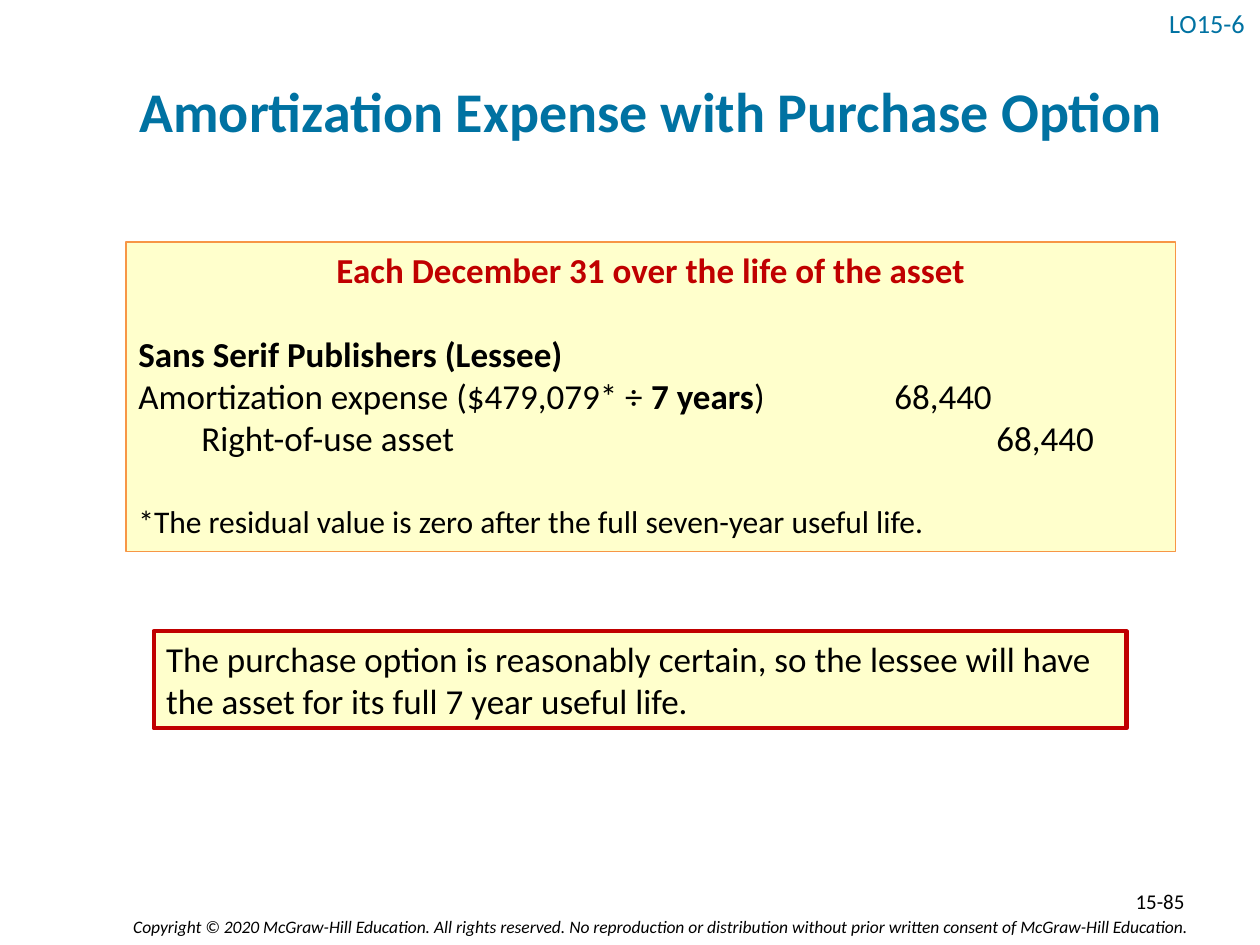
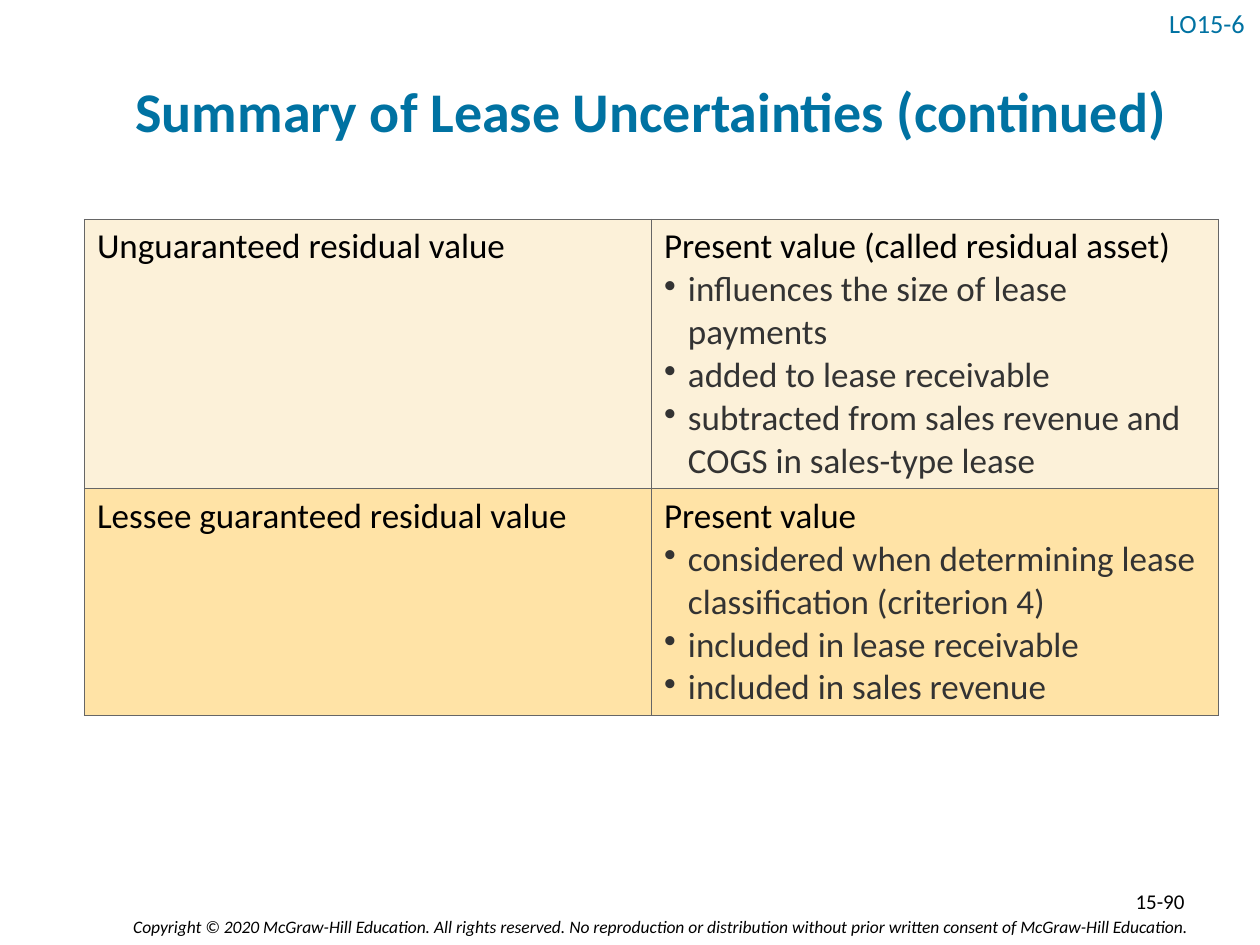
from lxml import etree
from pptx import Presentation
from pptx.dml.color import RGBColor
from pptx.enum.shapes import MSO_SHAPE
from pptx.enum.text import MSO_ANCHOR, PP_ALIGN
from pptx.oxml.ns import qn
from pptx.util import Inches, Pt

RECT = MSO_SHAPE.RECTANGLE
TOP, MIDDLE = MSO_ANCHOR.TOP, MSO_ANCHOR.MIDDLE
LEFT, CENTER, RIGHT = PP_ALIGN.LEFT, PP_ALIGN.CENTER, PP_ALIGN.RIGHT

FONT = "Calibri"
BLUE, RED, ORANGE = "0072A2", "C00000", "F79646"
BLACK, DARK, GRAY = "000000", "333333", "666666"
YELLOW, CREAM, GOLD = "FFFFCC", "FCF1D9", "FFE3A6"
GAP = 24.4  # height of one 20 pt line, in points
COPY = ("Copyright © 2020 McGraw-Hill Education. All rights reserved. No reproduction "
        "or distribution without prior written consent of McGraw-Hill Education.")


def tint(value):
    return RGBColor.from_string(value)


def write(frame, text, size=20, color=BLACK, bold=False, italic=False,
          align=LEFT, before=0, lines=None, bullet=False, tabs=()):
    """Add a paragraph; text between ** marks has the opposite weight."""
    para = frame.paragraphs[0]
    if para.runs:
        para = frame.add_paragraph()
    props = para._p.get_or_add_pPr()
    if bullet:
        props.set("marL", str(Inches(0.19)))
        props.set("indent", str(-Inches(0.19)))
        etree.SubElement(props, qn("a:buChar")).set("char", "•")
    if tabs:
        stops = etree.SubElement(props, qn("a:tabLst"))
        for stop in tabs:
            etree.SubElement(stops, qn("a:tab"), pos=str(Inches(stop)), algn="l")
    para.alignment = align
    if before:
        para.space_before = Pt(before)
    if lines:
        para.line_spacing = lines
    for i, part in enumerate(text.split("**")):
        run = para.add_run()
        run.text = part
        font = run.font
        font.name, font.size, font.italic = FONT, Pt(size), italic
        font.bold = bold != (i % 2 == 1)
        font.color.rgb = tint(color)


def label(slide, box, text, anchor=TOP, **style):
    frame = slide.shapes.add_textbox(*map(Inches, box)).text_frame
    frame.word_wrap = True
    frame.vertical_anchor = anchor
    write(frame, text, **style)
    return frame


def panel(slide, box, line, width):
    """Draw a yellow box and return its text frame."""
    shape = slide.shapes.add_shape(RECT, *map(Inches, box))
    shape.shadow.inherit = False
    shape.fill.solid()
    shape.fill.fore_color.rgb = tint(YELLOW)
    shape.line.color.rgb = tint(line)
    shape.line.width = Pt(width)
    frame = shape.text_frame
    frame.word_wrap = True
    frame.vertical_anchor = TOP
    return frame


def base(deck, title, number):
    """Add a slide with the shared title, tag and footer."""
    slide = deck.slides.add_slide(deck.slide_layouts[6])
    label(slide, (0.45, 7.22, 9.07, 0.27), COPY, size=10, italic=True, align=RIGHT)
    label(slide, (0.67, 0.25, 9, 1.25), title, MIDDLE,
          size=32, color=BLUE, bold=True, align=CENTER)
    tag = label(slide, (9.18, 0, 0.81, 0.4), "LO15-6", MIDDLE,
                size=15, color=BLUE, lines=0.9)
    tag.margin_right = 0
    label(slide, (7.17, 6.95, 2.33, 0.4), number, MIDDLE, size=12, align=RIGHT)
    return slide


def journal(slide, box):
    """Journal entry with debit and credit columns."""
    frame = panel(slide, box, ORANGE, 0.75)
    debit, credit = 6, 6.81
    write(frame, "Each December 31 over the life of the asset",
          color=RED, bold=True, align=CENTER)
    write(frame, "Sans Serif Publishers (Lessee)", bold=True, before=GAP)
    write(frame, "Amortization expense ($479,079* ÷ **7 years**)\t68,440", tabs=[debit])
    write(frame, "\tRight-of-use asset\t68,440", tabs=[0.5, credit])
    write(frame, "*The residual value is zero after the full seven-year useful life.",
          size=18, before=GAP)


def border(cell):
    props = cell._tc.get_or_add_tcPr()
    for side in ("lnL", "lnR", "lnT", "lnB"):
        line = etree.SubElement(props, qn("a:" + side), w=str(Pt(0.6)))
        fill = etree.SubElement(line, qn("a:solidFill"))
        etree.SubElement(fill, qn("a:srgbClr"), val=GRAY)


def grid(slide, box, rows):
    """Table of terms; each row holds height, fill, term, heading and points."""
    table = slide.shapes.add_table(len(rows), 2, *map(Inches, box)).table
    table.first_row = table.horz_banding = False
    for col in table.columns:
        col.width = Inches(box[2] / 2)
    for r, (height, fill, term, head, points) in enumerate(rows):
        table.rows[r].height = Inches(height)
        for c, text in enumerate((term, head)):
            cell = table.cell(r, c)
            border(cell)
            cell.fill.solid()
            cell.fill.fore_color.rgb = tint(fill)
            write(cell.text_frame, text)
        for point in points:
            write(table.cell(r, 1).text_frame, point, color=DARK, bullet=True)


def main():
    deck = Presentation()
    deck.slide_width, deck.slide_height = Inches(10), Inches(7.5)

    # Amortization entry
    slide = base(deck, "Amortization Expense with Purchase Option", "15-85")
    journal(slide, (1, 1.92, 8.33, 2.46))
    note = panel(slide, (1.22, 5.01, 7.72, 0.77), RED, 2.5)
    write(note, "The purchase option is reasonably certain, so the lessee will have "
                "the asset for its full 7 year useful life.")

    # Residual value summary
    slide = base(deck, "Summary of Lease Uncertainties (continued)", "15-90")
    grid(slide, (0.67, 1.74, 9, 3.94), [
        (2.14, CREAM, "Unguaranteed residual value",
         "Present value (called residual asset)",
         ["influences the size of lease payments",
          "added to lease receivable",
          "subtracted from sales revenue and COGS in sales-type lease"]),
        (1.8, GOLD, "Lessee guaranteed residual value",
         "Present value",
         ["considered when determining lease classification (criterion 4)",
          "included in lease receivable",
          "included in sales revenue"]),
    ])
    deck.save("out.pptx")


if __name__ == "__main__":
    main()
